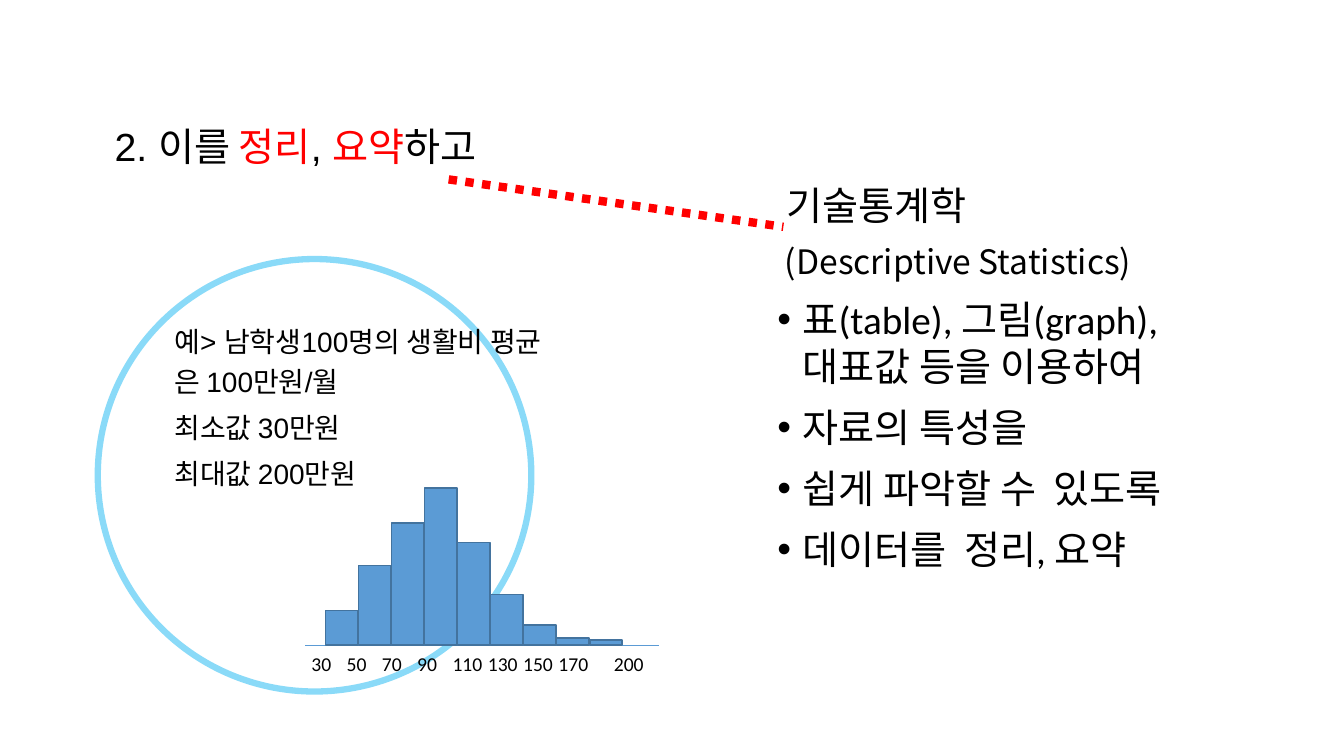
from lxml.etree import SubElement
from pptx import Presentation
from pptx.dml.color import RGBColor
from pptx.enum.dml import MSO_LINE
from pptx.enum.shapes import MSO_CONNECTOR, MSO_SHAPE
from pptx.enum.text import MSO_AUTO_SIZE, PP_ALIGN
from pptx.oxml.ns import qn
from pptx.util import Inches, Pt

# Content
HEADING = [(" 2. 이를 ", "text"), ("정리", "accent"), (", ", "text"),
           ("요약", "accent"), ("하고", "text")]
EXAMPLE = ["예> 남학생100명의 생활비 평균 은 100만원/월", "최소값 30만원", "최대값 200만원"]
# Each term: runs of (text, size, font), then line height in points
TERM = [
    ([(" 기술통계학", "large", "body")], 31),
    ([(" ", "medium", "body"), ("(Descriptive Statistics)", "medium", "term")], 28),
]
POINTS = ["표(table), 그림(graph), 대표값 등을 이용하여", "자료의 특성을",
          "쉽게 파악할 수  있도록", "데이터를  정리, 요약"]
POINT_HEIGHT = 33.6
BAR_HEIGHTS = [0.34, 0.79, 1.21, 1.56, 1.02, 0.5, 0.2, 0.07, 0.05]
AXIS_LABELS = ["30", "50", "70", "90", "110", "130", "150", "170", "200"]

THEME = {
    "color": {"text": "000000", "accent": "FF0000", "circle": "00B0F0",
              "bar": "5B9BD5", "edge": "43739E"},
    "size": {"large": 28, "medium": 24, "example": 20, "label": 14},
    "font": {"body": "Calibri", "term": "Noto Sans CJK TC", "left": "Arial"},
}

# Layout in inches
AXIS_Y, AXIS_LEFT, AXIS_RIGHT = 6.4, 3.03, 6.54
BAR_LEFT, BAR_LAST, BAR_WIDTH = 3.23, 5.85, 0.32
LABEL_LEFT, LABEL_STEP, LABEL_LAST = 2.99, 0.35, 5.99


def inches(*values):
    return [Inches(v) for v in values]


def color(name):
    return RGBColor.from_string(THEME["color"][name])


def set_format(obj, values):
    for name, value in values.items():
        setattr(obj, name, value)


def add_run(p, text, size, font, tint="text"):
    r = p.add_run()
    r.text = text
    set_format(r.font, {"size": Pt(THEME["size"][size]), "name": THEME["font"][font]})
    r.font.color.rgb = color(tint)


def add_paragraph(tf, first, values):
    p = tf.paragraphs[0] if first else tf.add_paragraph()
    set_format(p, {"alignment": PP_ALIGN.LEFT, **values})
    return p


def add_text(shapes, box, wrap=True):
    tf = shapes.add_textbox(*inches(*box)).text_frame
    set_format(tf, {"word_wrap": wrap, "auto_size": MSO_AUTO_SIZE.NONE})
    return tf


def add_line(shapes, ends, tint, width, dash=MSO_LINE.SOLID):
    line = shapes.add_connector(MSO_CONNECTOR.STRAIGHT, *inches(*ends))
    SubElement(line._element.spPr, qn("a:effectLst"))
    line.line.color.rgb = color(tint)
    set_format(line.line, {"width": Pt(width), "dash_style": dash})


def add_shape(shapes, kind, box, fill, edge, width):
    sp = shapes.add_shape(kind, *inches(*box))
    sp.shadow.inherit = False
    if fill:
        sp.fill.solid()
        sp.fill.fore_color.rgb = color(fill)
    else:
        sp.fill.background()
    sp.line.color.rgb = color(edge)
    sp.line.width = Pt(width)
    return sp


def add_description(slide):
    body = slide.placeholders[1]
    set_format(body, dict(zip(("left", "top", "width", "height"),
                              inches(7.61, 1.78, 4.15, 4.49))))
    tf = body.text_frame
    set_format(tf, {"word_wrap": True, "auto_size": MSO_AUTO_SIZE.NONE})
    rows = TERM + [([(text, "large", "body")], POINT_HEIGHT) for text in POINTS]
    for i, (runs, height) in enumerate(rows):
        p = add_paragraph(tf, i == 0, {"space_before": Pt(10), "line_spacing": Pt(height)})
        pPr = p._p.get_or_add_pPr()
        pPr.set("marL", str(Inches(0.25)))
        pPr.set("indent", str(Inches(-0.25)))
        if i < len(TERM):
            SubElement(pPr, qn("a:buNone"))
        for text, size, font in runs:
            add_run(p, text, size, font)


def add_histogram(slide):
    shapes = slide.shapes.add_group_shape().shapes
    add_line(shapes, (AXIS_LEFT, AXIS_Y, AXIS_RIGHT, AXIS_Y), "bar", 0.5)
    step = (BAR_LAST - BAR_LEFT) / (len(BAR_HEIGHTS) - 1)
    for i, height in enumerate(BAR_HEIGHTS):
        box = (BAR_LEFT + i * step, AXIS_Y - height, BAR_WIDTH, height)
        add_shape(shapes, MSO_SHAPE.RECTANGLE, box, "bar", "edge", 1)
    for i, label in enumerate(AXIS_LABELS):
        last = i == len(AXIS_LABELS) - 1
        left = LABEL_LAST if last else LABEL_LEFT + i * LABEL_STEP
        tf = add_text(shapes, (left, 6.42, 0.2 + 0.1 * len(label), 0.34), wrap=False)
        add_run(add_paragraph(tf, True, {}), label, "label", "body")


def main():
    prs = Presentation()
    set_format(prs, {"slide_width": Inches(13.33), "slide_height": Inches(7.5)})
    slide = prs.slides.add_slide(prs.slide_layouts[1])
    title = slide.shapes.title._element
    title.getparent().remove(title)

    # Description on the right
    add_description(slide)

    # Heading
    tf = add_text(slide.shapes, (0.93, 1.07, 5.13, 1.5))
    p = add_paragraph(tf, True, {"line_spacing": 1.2, "space_before": Pt(5.6)})
    for text, tint in HEADING:
        add_run(p, text, "large", "left", tint)

    # Circle and dotted link
    circle = add_shape(slide.shapes, MSO_SHAPE.OVAL, (0.97, 2.57, 4.3, 4.29),
                       None, "circle", 4.5)
    tint = circle.line.fill._xPr.find(qn("a:solidFill"))[0]
    SubElement(tint, qn("a:alpha")).set("val", "45000")
    add_line(slide.shapes, (4.45, 1.78, 7.77, 2.25), "accent", 6, MSO_LINE.ROUND_DOT)

    # Example
    tf = add_text(slide.shapes, (1.63, 3.1, 3.94, 1.85))
    for i, text in enumerate(EXAMPLE):
        p = add_paragraph(tf, i == 0, {"line_spacing": 1.2, "space_before": Pt(4)})
        add_run(p, text, "example", "left")

    # Histogram
    add_histogram(slide)
    prs.save("out.pptx")


if __name__ == "__main__":
    main()
